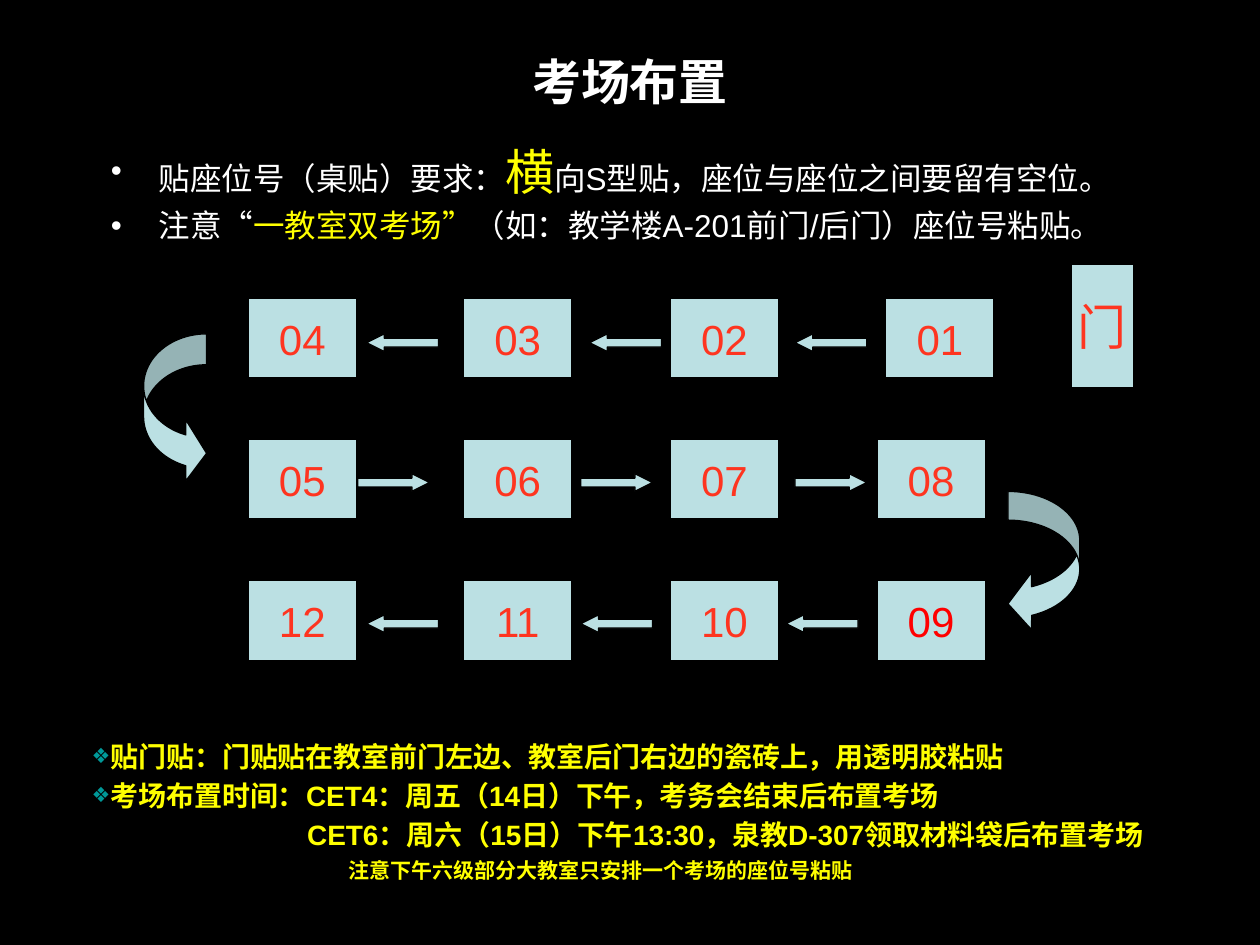
from dataclasses import dataclass

from lxml.etree import SubElement
from pptx import Presentation
from pptx.dml.color import RGBColor
from pptx.enum.shapes import MSO_SHAPE as Preset
from pptx.enum.text import MSO_ANCHOR as Anchor, MSO_AUTO_SIZE as AutoSize, PP_ALIGN as Align
from pptx.oxml.ns import qn
from pptx.util import Inches, Pt


@dataclass(frozen=True)
class Theme:
    font: str = "Arial"
    black: str = "000000"
    white: str = "FFFFFF"
    yellow: str = "FFFF00"
    seat: str = "BBE0E3"
    number: str = "FE3520"
    red: str = "FF0000"
    bullet: str = "009999"
    large: int = 28
    seat_size: int = 24
    body: int = 18
    note: int = 16
    small: int = 12


THEME = Theme()
COLUMNS = (1.97, 3.68, 5.32, 6.96)
SEAT_ROWS = (
    (2.37, ("04", "03", "02", "01"), Preset.LEFT_ARROW, 2.65, (2.91, 4.68, 6.31)),
    (3.49, ("05", "06", "07", "08"), Preset.RIGHT_ARROW, 3.76, (2.84, 4.61, 6.31)),
    (4.61, ("12", "11", "10", "09"), Preset.LEFT_ARROW, 4.88, (2.91, 4.61, 6.24)),
)


def place(shape, left, top, width, height):
    shape.left, shape.top = Inches(left), Inches(top)
    shape.width, shape.height = Inches(width), Inches(height)


def add_run(paragraph, text, size, color, bold=False):
    run = paragraph.add_run()
    run.text = text
    font = run.font
    font.name, font.size, font.bold = THEME.font, Pt(size), bold
    font.color.rgb = RGBColor.from_string(color)


def set_bullet(paragraph, char=None, color=None, percent=100, left=0, hanging=0):
    properties = paragraph._p.get_or_add_pPr()
    properties.set("marL", str(Inches(left)))
    properties.set("indent", str(-Inches(hanging)))
    if char is None:
        SubElement(properties, qn("a:buNone"))
        return
    if color:
        SubElement(SubElement(properties, qn("a:buClr")), qn("a:srgbClr"), val=color)
    SubElement(properties, qn("a:buSzPct"), val=str(percent * 1000))
    SubElement(properties, qn("a:buFont"), typeface=THEME.font)
    SubElement(properties, qn("a:buChar"), char=char)


def next_paragraph(frame, index, size):
    paragraph = frame.add_paragraph() if index else frame.paragraphs[0]
    paragraph.space_before = Pt(size * 0.2 if index else 0)
    return paragraph


def add_block(slide, preset, left, top, width, height, adjustments=()):
    block = slide.shapes.add_shape(
        preset, Inches(left), Inches(top), Inches(width), Inches(height))
    for index, value in enumerate(adjustments):
        block.adjustments[index] = value
    block.shadow.inherit = False
    block.fill.solid()
    block.fill.fore_color.rgb = RGBColor.from_string(THEME.seat)
    block.line.color.rgb = RGBColor.from_string(THEME.black)
    block.line.width = Pt(0.75)
    return block


def add_label_box(slide, label, left, top, width, height, size, color):
    frame = add_block(slide, Preset.FLOWCHART_PROCESS, left, top, width, height).text_frame
    frame.word_wrap = False
    frame.vertical_anchor = Anchor.MIDDLE
    frame.paragraphs[0].alignment = Align.CENTER
    add_run(frame.paragraphs[0], label, size, color)


def add_title(slide):
    title = slide.shapes.title
    place(title, 0.5, 0.3, 9, 0.69)
    frame = title.text_frame
    frame.auto_size = AutoSize.NONE
    frame.vertical_anchor = Anchor.MIDDLE
    frame.paragraphs[0].alignment = Align.CENTER
    add_run(frame.paragraphs[0], "考场布置", THEME.large, THEME.white, bold=True)


def add_requirements(slide):
    body = slide.placeholders[1]
    place(body, 0.78, 1.07, 9, 4.95)
    body.text_frame.auto_size = AutoSize.NONE
    requirements = (
        (("贴座位号（桌贴）要求：", THEME.body, THEME.white),
         ("横", THEME.large, THEME.yellow),
         ("向S型贴，座位与座位之间要留有空位。", THEME.body, THEME.white)),
        (("注意“", THEME.body, THEME.white),
         ("一教室双考场”", THEME.body, THEME.yellow),
         ("（如：教学楼A-201前门/后门）座位号粘贴。", THEME.body, THEME.white)),
    )
    for index, pieces in enumerate(requirements):
        paragraph = next_paragraph(body.text_frame, index, THEME.body)
        set_bullet(paragraph, "•", left=0.38, hanging=0.38)
        for text, size, color in pieces:
            add_run(paragraph, text, size, color)


def add_seating_plan(slide):
    for top, seats, arrow, arrow_top, arrow_lefts in SEAT_ROWS:
        for left, seat in zip(COLUMNS, seats):
            seat_left = 7.03 if seat == "01" else left
            color = THEME.red if seat == "09" else THEME.number
            add_label_box(slide, seat, seat_left, top, 0.86, 0.63, THEME.seat_size, color)
        for left in arrow_lefts:
            add_block(slide, arrow, left, arrow_top, 0.57, 0.14, (0.5, 1))
    add_block(slide, Preset.CURVED_RIGHT_ARROW, 1.14, 2.65, 0.5, 1.19, (0.49, 0.97, 0.33))
    add_block(slide, Preset.CURVED_LEFT_ARROW, 8, 3.9, 0.57, 1.12, (0.4, 0.8, 0.33))
    add_label_box(slide, "门", 8.5, 2.1, 0.5, 0.98, THEME.large, THEME.number)


def add_notes_block(slide):
    frame = slide.shapes.add_textbox(
        Inches(0.63), Inches(5.82), Inches(9.1), Inches(1.34)).text_frame
    frame.word_wrap = True
    lines = (
        ("贴门贴：门贴贴在教室前门左边、教室后门右边的瓷砖上，用透明胶粘贴", THEME.note, "❖", 0),
        ("考场布置时间：CET4：周五（14日）下午，考务会结束后布置考场", THEME.note, "❖", 0),
        ("CET6：周六（15日）下午13:30，泉教D-307领取材料袋后布置考场", THEME.note, None, 1.71),
        ("注意下午六级部分大教室只安排一个考场的座位号粘贴", THEME.small, None, 2.04),
    )
    for index, (text, size, char, left) in enumerate(lines):
        paragraph = next_paragraph(frame, index, THEME.note)
        set_bullet(paragraph, char, THEME.bullet, 75, left)
        add_run(paragraph, text, size, THEME.yellow, bold=True)


def main():
    """Build the exam room layout slide and save it."""
    deck = Presentation()
    deck.slide_width, deck.slide_height = Inches(10), Inches(7.5)
    slide = deck.slides.add_slide(deck.slide_layouts[1])
    slide.background.fill.solid()
    slide.background.fill.fore_color.rgb = RGBColor.from_string(THEME.black)
    add_title(slide)
    add_requirements(slide)
    add_seating_plan(slide)
    add_notes_block(slide)
    deck.save("out.pptx")


if __name__ == "__main__":
    main()
